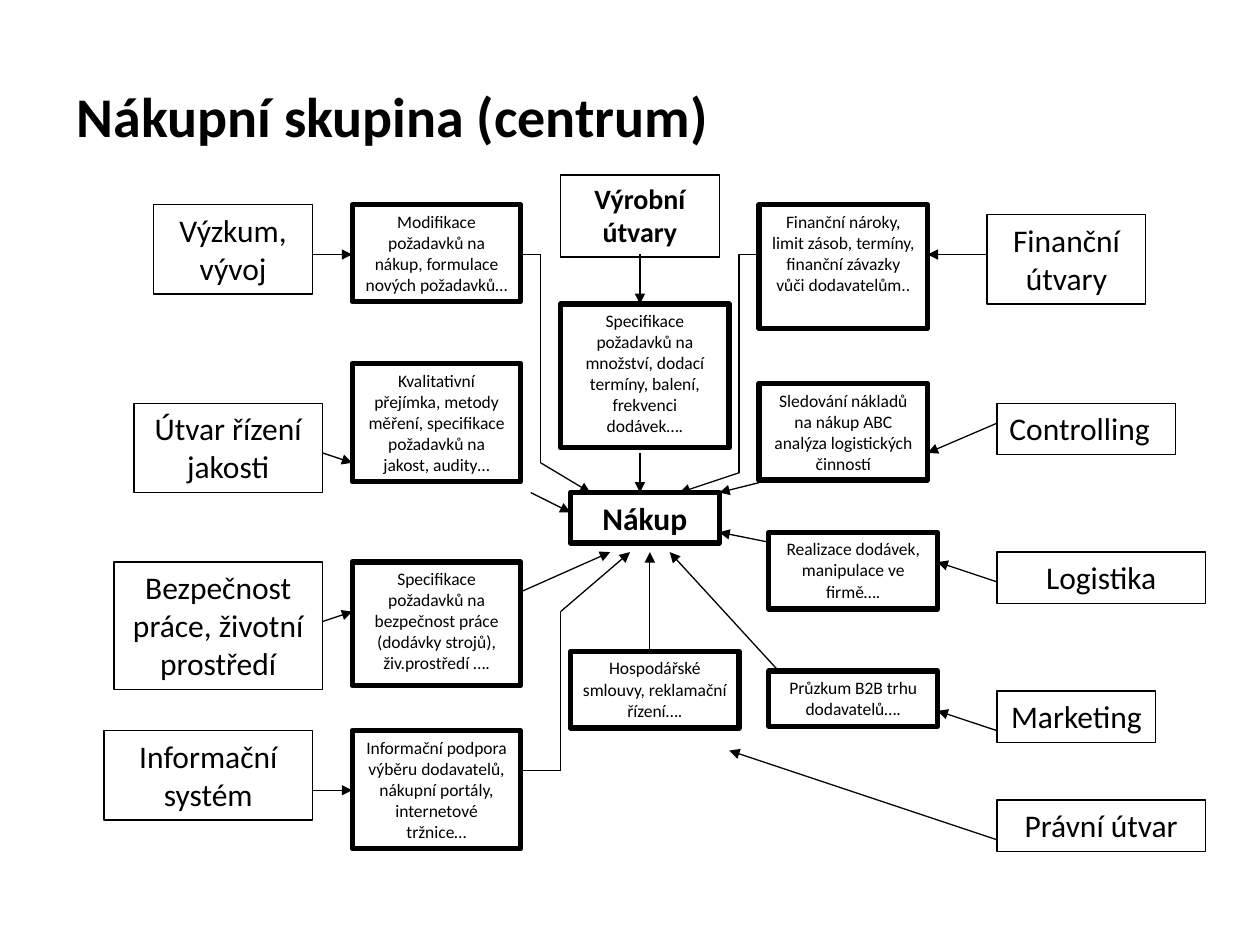
from dataclasses import dataclass
from itertools import pairwise

from lxml import etree
from pptx import Presentation
from pptx import util as u
from pptx.dml.color import RGBColor
from pptx.enum import shapes, text
from pptx.oxml.ns import qn


@dataclass(frozen=True)
class Theme:
    font: str = "Calibri"
    ink: RGBColor = RGBColor(0, 0, 0)
    paper: RGBColor = RGBColor(255, 255, 255)
    title: int = 32
    unit: int = 18
    producer: int = 16
    task: int = 10
    thin: float = 0.75
    thick: float = 3


def write(frame, words, theme, *, size, bold=False, align=text.PP_ALIGN.CENTER, wrap=True):
    """Put one formatted paragraph into a text frame."""
    frame.word_wrap = wrap
    frame.vertical_anchor = text.MSO_ANCHOR.TOP
    paragraph = frame.paragraphs[0]
    paragraph.alignment = align
    run = paragraph.add_run()
    run.text = words
    run.font.name = theme.font
    run.font.size = u.Pt(size)
    run.font.bold = bold
    run.font.color.rgb = theme.ink


class Board:
    """Draws on one slide; all lengths are in centimetres."""

    def __init__(self, slide, theme):
        self.slide = slide
        self.theme = theme

    def title(self, words, *area):
        box = self.slide.shapes.add_textbox(*map(u.Cm, area))
        write(box.text_frame, words, self.theme, size=self.theme.title,
              bold=True, align=text.PP_ALIGN.LEFT, wrap=False)

    def box(self, words, *area, border, **style):
        rect = self.slide.shapes.add_shape(shapes.MSO_SHAPE.RECTANGLE, *map(u.Cm, area))
        rect.shadow.inherit = False
        rect.fill.solid()
        rect.fill.fore_color.rgb = self.theme.paper
        rect.line.color.rgb = self.theme.ink
        rect.line.width = u.Pt(border)
        write(rect.text_frame, words, self.theme, **style)

    def unit(self, words, *area, **style):
        self.box(words, *area, border=self.theme.thin, **{"size": self.theme.unit, **style})

    def task(self, words, left, top, height):
        self.box(words, left, top, 3.4, height, border=self.theme.thick, size=self.theme.task)

    def route(self, *points):
        """Join the points with lines; the last one ends in an arrowhead."""
        for start, end in pairwise(points):
            line = self.slide.shapes.add_connector(
                shapes.MSO_CONNECTOR.STRAIGHT, *map(u.Cm, start + end))
            line.line.color.rgb = self.theme.ink
            line.line.width = u.Pt(self.theme.thin)
            properties = line._element.spPr
            etree.SubElement(properties, qn("a:effectLst"))
            if end == points[-1]:
                outline = properties.find(qn("a:ln"))
                etree.SubElement(outline, qn("a:tailEnd"), type="triangle")


# Departments: name, left, top, width, height
UNITS = [
    ("Výzkum, vývoj", 3.1, 4.13, 3.2, 1.8),
    ("Útvar řízení jakosti", 2.7, 8.13, 3.8, 1.8),
    ("Bezpečnost práce, životní prostředí", 2.3, 11.33, 4.2, 2.57),
    ("Informační systém", 2.1, 14.73, 4.2, 1.8),
    ("Finanční útvary", 19.9, 4.33, 3.2, 1.8),
    ("Logistika", 20.1, 11.13, 4.2, 1.04),
    ("Marketing", 20.1, 13.93, 3.2, 1.04),
    ("Právní útvar", 20.1, 16.13, 4.2, 1.04),
]

# What each department brings: words, left, top, height
TASKS = [
    ("Modifikace požadavků na nákup, formulace nových požadavků…", 7.1, 4.13, 1.95),
    ("Kvalitativní přejímka, metody měření, specifikace požadavků na jakost, audity…",
     7.1, 7.33, 2.38),
    ("Specifikace požadavků na bezpečnost práce (dodávky strojů), živ.prostředí ….",
     7.1, 11.33, 2.49),
    ("Informační podpora výběru dodavatelů, nákupní portály, internetové tržnice…",
     7.1, 14.73, 2.38),
    ("Specifikace požadavků na množství, dodací termíny, balení, frekvenci dodávek….",
     11.3, 6.13, 2.9),
    ("Hospodářské smlouvy, reklamační řízení….", 11.5, 13.13, 1.55),
    ("Finanční nároky, limit zásob, termíny, finanční závazky vůči dodavatelům..",
     15.3, 4.13, 2.49),
    ("Sledování nákladů na nákup ABC analýza logistických činností", 15.3, 7.73, 1.95),
    ("Realizace dodávek, manipulace ve firmě….", 15.5, 10.73, 1.55),
    ("Průzkum B2B trhu dodavatelů….", 15.5, 13.53, 1.11),
]

ROUTES = [
    # Department to task
    [(6.3, 5.13), (7.1, 5.13)],
    [(6.5, 9.13), (7.1, 9.33)],
    [(6.5, 12.53), (7.1, 12.33)],
    [(6.3, 15.93), (7.1, 15.93)],
    [(12.9, 5.13), (12.9, 6.13)],
    [(19.9, 5.13), (18.7, 5.13)],
    [(20.1, 8.53), (18.7, 9.13)],
    [(20.1, 11.73), (18.9, 11.33)],
    [(20.1, 14.73), (18.9, 14.33)],
    [(20.1, 16.93), (14.7, 15.13)],
    # Task to purchasing
    [(10.5, 5.13), (10.9, 5.13), (10.9, 9.33), (11.9, 9.93)],
    [(10.7, 9.93), (11.5, 10.33)],
    [(10.5, 11.93), (12.3, 11.13)],
    [(10.5, 15.53), (11.3, 15.53), (11.3, 12.33), (12.7, 11.13)],
    [(12.9, 9.13), (12.9, 9.93)],
    [(13.1, 13.13), (13.1, 11.13)],
    [(15.3, 5.13), (14.9, 5.13), (14.9, 9.53), (13.7, 9.93)],
    [(15.3, 9.73), (14.5, 9.93)],
    [(15.5, 10.93), (14.5, 10.73)],
    [(15.7, 13.53), (13.5, 11.13)],
]


def main():
    deck = Presentation()
    deck.slide_width, deck.slide_height = u.Cm(25.4), u.Cm(19.05)
    theme = Theme()
    board = Board(deck.slides.add_slide(deck.slide_layouts[6]), theme)

    # Heading and centre
    board.title("Nákupní skupina (centrum)", 1.3, 1.52, 14.4, 1.63)
    board.box("Nákup", 11.5, 9.93, 3, 1.02, border=theme.thick, size=theme.unit, bold=True)

    # Departments and tasks
    board.unit("Výrobní útvary", 11.3, 3.53, 3.2, 1.65, size=theme.producer, bold=True)
    board.unit("Controlling", 20.1, 8.13, 3.6, 1.04, align=text.PP_ALIGN.LEFT)
    for unit in UNITS:
        board.unit(*unit)
    for task in TASKS:
        board.task(*task)

    # Arrows
    for points in ROUTES:
        board.route(*points)

    deck.save("out.pptx")


if __name__ == "__main__":
    main()
